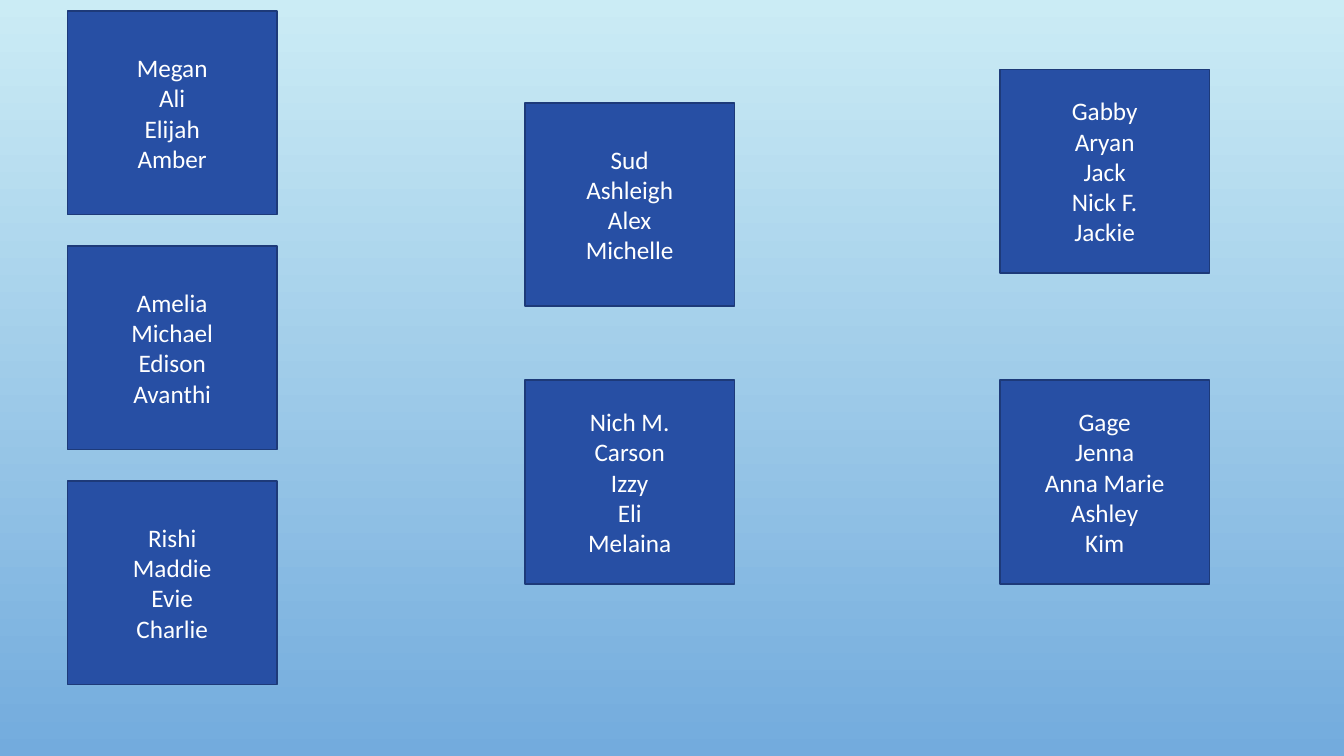
import pptx
import pptx.util
import pptx.dml.color
import pptx.enum.shapes
import pptx.enum.text


def colour(hex_code):
    """Turn a hex string into a colour."""
    return pptx.dml.color.RGBColor.from_string(hex_code)


class GroupChart:
    """Draw cards of group members on one slide."""

    card_width, card_height = 5.28, 5.13
    card_fill, card_line = "274FA4", "1D3A79"
    sky = ("CBECF5", "73ABDD")
    name_format = {"name": "Calibri", "size": pptx.util.Pt(18)}
    name_colour = "FFFFFF"

    def __init__(self, slide):
        self.slide = slide

    def background(self):
        """Fill the slide with a gradient from top to bottom."""
        fill = self.slide.background.fill
        fill.gradient()
        fill.gradient_angle = 270
        for stop, shade in zip(fill.gradient_stops, self.sky):
            stop.color.rgb = colour(shade)

    def card(self, left, top, members):
        """Add one card listing its members."""
        card = self.slide.shapes.add_shape(
            pptx.enum.shapes.MSO_SHAPE.RECTANGLE,
            *map(pptx.util.Cm, (left, top, self.card_width, self.card_height)))
        card.shadow.inherit = False
        card.fill.solid()
        card.fill.fore_color.rgb = colour(self.card_fill)
        card.line.color.rgb = colour(self.card_line)
        card.line.width = pptx.util.Pt(1.25)
        frame = card.text_frame
        frame.word_wrap = True
        frame.vertical_anchor = pptx.enum.text.MSO_ANCHOR.MIDDLE
        frame.text = "\n".join(members)
        for member in frame.paragraphs:
            member.alignment = pptx.enum.text.PP_ALIGN.CENTER
            font = member.runs[0].font
            for attribute, value in self.name_format.items():
                setattr(font, attribute, value)
            font.color.rgb = colour(self.name_colour)

    def column(self, left, top, pitch, groups):
        """Stack cards at an equal pitch."""
        for row, members in enumerate(groups):
            self.card(left, top + row * pitch, members)


def main():
    """Build and save the slide."""
    deck = pptx.Presentation()
    deck.slide_width = pptx.util.Cm(33.87)
    deck.slide_height = pptx.util.Cm(19.05)
    chart = GroupChart(deck.slides.add_slide(deck.slide_layouts[6]))
    chart.background()
    chart.column(1.7, 0.28, 5.92, [
        ["Megan", "Ali", "Elijah", "Amber"],
        ["Amelia", "Michael", "Edison", "Avanthi"],
        ["Rishi", "Maddie", "Evie", "Charlie"],
    ])
    chart.column(13.23, 2.59, 6.99, [
        ["Sud", "Ashleigh", "Alex", "Michelle"],
        ["Nich M.", "Carson", "Izzy", "Eli", "Melaina"],
    ])
    chart.column(25.2, 1.75, 7.83, [
        ["Gabby", "Aryan", "Jack", "Nick F.", "Jackie"],
        ["Gage", "Jenna", "Anna Marie", "Ashley", "Kim"],
    ])
    deck.save("out.pptx")


if __name__ == "__main__":
    main()
